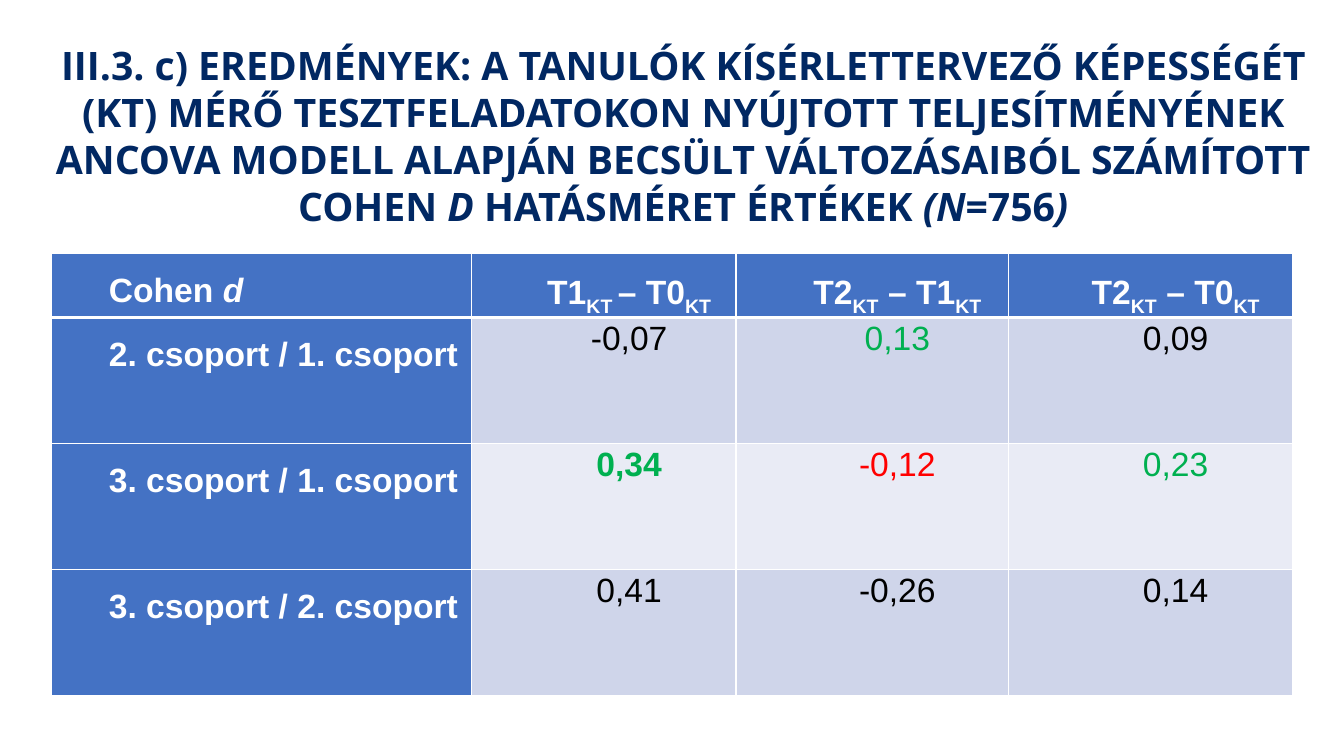
from pptx import Presentation, util as u
from pptx.dml.color import RGBColor
from pptx.enum import text
from pptx.oxml import parse_xml
from pptx.oxml.ns import nsdecls

NAVY = RGBColor(0x01, 0x28, 0x63)
BLUE = RGBColor(0x44, 0x72, 0xC4)
BAND_DARK = RGBColor(0xCF, 0xD5, 0xEA)
BAND_LIGHT = RGBColor(0xE9, 0xEB, 0xF5)
WHITE = RGBColor(0xFF, 0xFF, 0xFF)
BLACK = RGBColor(0, 0, 0)
GREEN = RGBColor(0x00, 0xB0, 0x50)
RED = RGBColor(0xFF, 0, 0)

WIDTH, HEIGHT = u.Inches(13.33), u.Inches(7.5)
COLUMNS = (4.17, 2.62, 2.7, 2.82)
ROWS = (0.58, 1.25, 1.25, 1.25)

TITLE = (
    ("III.3. c) EREDMÉNYEK: A TANULÓK KÍSÉRLETTERVEZŐ KÉPESSÉGÉT (KT) MÉRŐ "
     "TESZTFELADATOKON NYÚJTOTT TELJESÍTMÉNYÉNEK ANCOVA MODELL ALAPJÁN "
     "BECSÜLT VÁLTOZÁSAIBÓL SZÁMÍTOTT COHEN ", False),
    ("D ", True), ("HATÁSMÉRET ÉRTÉKEK ", False),
    ("(N", True), ("=756", False), (")", True),
)
DIFFERENCES = (("T1", "KT ", "– T0", "KT"),
               ("T2", "KT", " – T1", "KT"),
               ("T2", "KT", " – T0", "KT"))
EFFECTS = (
    ("2. csoport / 1. csoport",
     (("-0,07", BLACK, False), ("0,13", GREEN, False), ("0,09", BLACK, False))),
    ("3. csoport / 1. csoport",
     (("0,34", GREEN, True), ("-0,12", RED, False), ("0,23", GREEN, False))),
    ("3. csoport / 2. csoport",
     (("0,41", BLACK, False), ("-0,26", BLACK, False), ("0,14", BLACK, False))),
)


def set_values(target, values):
    """Set each attribute of the target from a dict."""
    for name, value in values.items():
        setattr(target, name, value)


def add_run(paragraph, words, size, font, color, bold=True, italic=False):
    """Append a formatted run and return it."""
    run = paragraph.add_run()
    run.text = words
    set_values(run.font, {"size": u.Pt(size), "name": font,
                          "bold": bold, "italic": italic})
    run.font.color.rgb = color
    return run


def add_title(slide):
    """Add the centred heading."""
    shape = slide.shapes.add_textbox(
        round(WIDTH * 0.0323), round(HEIGHT * 0.0467),
        round(WIDTH * 0.952), round(HEIGHT * 0.2653))
    set_values(shape.text_frame, {
        "word_wrap": True, "vertical_anchor": text.MSO_ANCHOR.MIDDLE,
        "auto_size": text.MSO_AUTO_SIZE.SHAPE_TO_FIT_TEXT})
    paragraph = shape.text_frame.paragraphs[0]
    paragraph.alignment = text.PP_ALIGN.CENTER
    for words, italic in TITLE:
        add_run(paragraph, words, 28, "Open Sans", NAVY, italic=italic)


def add_borders(cell, bottom):
    """Draw white cell borders with the given bottom width in points."""
    properties = cell._tc.get_or_add_tcPr()
    for index, side in enumerate("LRTB"):
        width = u.Pt(bottom if side == "B" else 1)
        properties.insert(index, parse_xml(
            f'<a:ln{side} {nsdecls("a")} w="{width}"><a:solidFill>'
            f'<a:srgbClr val="{WHITE}"/></a:solidFill></a:ln{side}>'))


def format_cell(cell, fill, alignment, spacing, after=0, bottom=1):
    """Fill and border a cell and return its paragraph."""
    set_values(cell, {"margin_left": u.Inches(0.07), "margin_right": u.Inches(0.07),
                      "margin_top": 0, "margin_bottom": 0})
    cell.fill.solid()
    cell.fill.fore_color.rgb = fill
    add_borders(cell, bottom)
    paragraph = cell.text_frame.paragraphs[0]
    set_values(paragraph, {"alignment": alignment, "line_spacing": spacing,
                           "space_after": u.Pt(after)})
    paragraph._p.get_or_add_pPr().set("marL", str(u.Inches(0.5)))
    return paragraph


def fill_header(table):
    """Write the header row with subscripts."""
    paragraph = format_cell(table.cell(0, 0), BLUE, text.PP_ALIGN.LEFT, 1.5, bottom=3)
    add_run(paragraph, "Cohen", 24, "Arial", WHITE)
    add_run(paragraph, " d", 24, "Arial", WHITE, italic=True)
    for column, parts in enumerate(DIFFERENCES, 1):
        after = 8 if column == len(DIFFERENCES) else 0
        paragraph = format_cell(table.cell(0, column), BLUE,
                                text.PP_ALIGN.CENTER, 1.5, after, bottom=3)
        for index, words in enumerate(parts):
            run = add_run(paragraph, words, 24, "Arial", WHITE)
            if index % 2:
                run.font._element.set("baseline", "-25000")


def fill_effects(table):
    """Write the group comparisons and their effect sizes."""
    for row, (label, effects) in enumerate(EFFECTS, 1):
        paragraph = format_cell(table.cell(row, 0), BLUE, text.PP_ALIGN.LEFT, 1.5)
        add_run(paragraph, label, 24, "Arial", WHITE)
        band = BAND_DARK if row % 2 else BAND_LIGHT
        for column, (value, color, bold) in enumerate(effects, 1):
            paragraph = format_cell(table.cell(row, column), band,
                                    text.PP_ALIGN.CENTER, 1.07, 8)
            add_run(paragraph, value, 24, "Arial", color, bold)


def add_effect_table(slide):
    """Add the table of effect sizes."""
    table = slide.shapes.add_table(
        len(ROWS), len(COLUMNS), round(WIDTH * 0.0383), round(HEIGHT * 0.3347),
        u.Inches(sum(COLUMNS)), u.Inches(sum(ROWS))).table
    for column, width in zip(table.columns, COLUMNS):
        column.width = u.Inches(width)
    for row, height in zip(table.rows, ROWS):
        row.height = u.Inches(height)
    fill_header(table)
    fill_effects(table)


def main():
    """Build and save the slide."""
    presentation = Presentation()
    set_values(presentation, {"slide_width": WIDTH, "slide_height": HEIGHT})
    slide = presentation.slides.add_slide(presentation.slide_layouts[6])
    add_effect_table(slide)
    add_title(slide)
    presentation.save("out.pptx")


if __name__ == "__main__":
    main()
